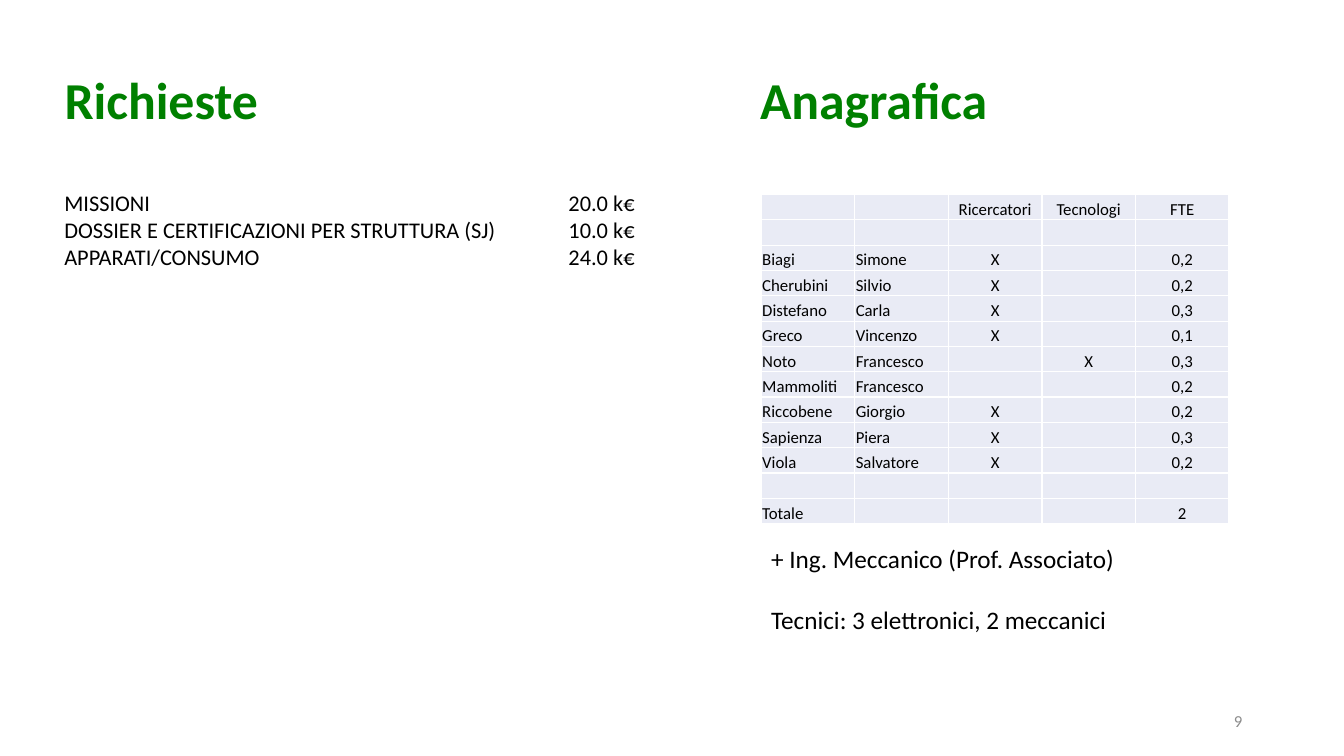
import lxml.etree
import pptx
import pptx.dml.color
import pptx.enum.text
import pptx.oxml.ns
import pptx.util

Inches = pptx.util.Inches
Pt = pptx.util.Pt
ALIGN = pptx.enum.text.PP_ALIGN
ANCHOR = pptx.enum.text.MSO_ANCHOR
AUTO_SIZE = pptx.enum.text.MSO_AUTO_SIZE

FONT = "Calibri"
BLACK, GREEN, GREY, CELL_FILL = "000000", "008000", "8C8C8C", "E9EBF5"

REQUESTS = [
    ("MISSIONI", "20.0 k€"),
    ("DOSSIER E CERTIFICAZIONI PER STRUTTURA (SJ)", "10.0 k€"),
    ("APPARATI/CONSUMO", "24.0 k€"),
]
STAFF_NOTES = ["+ Ing. Meccanico (Prof. Associato)", "Tecnici: 3 elettronici, 2 meccanici"]
EMPTY_ROW = ("", "", "", "", "")
STAFF = [
    ("", "", "Ricercatori", "Tecnologi", "FTE"),
    EMPTY_ROW,
    ("Biagi", "Simone", "X", "", "0,2"),
    ("Cherubini", "Silvio", "X", "", "0,2"),
    ("Distefano", "Carla", "X", "", "0,3"),
    ("Greco", "Vincenzo", "X", "", "0,1"),
    ("Noto", "Francesco", "", "X", "0,3"),
    ("Mammoliti", "Francesco", "", "", "0,2"),
    ("Riccobene", "Giorgio", "X", "", "0,2"),
    ("Sapienza", "Piera", "X", "", "0,3"),
    ("Viola", "Salvatore", "X", "", "0,2"),
    EMPTY_ROW,
    ("Totale", "", "", "", "2"),
]


def rgb(value):
    return pptx.dml.color.RGBColor.from_string(value)


def set_font(paragraph, size, color=BLACK, bold=False):
    font = paragraph.font
    font.name, font.size, font.bold = FONT, Pt(size), bold
    font.color.rgb = rgb(color)


def add_text(slide, lines, left, top, width, height):
    frame = slide.shapes.add_textbox(
        Inches(left), Inches(top), Inches(width), Inches(height)).text_frame
    frame.word_wrap = True
    frame.text = "\n".join(lines)
    return frame


def format_heading(shape, text, left, top, width, height):
    shape.left, shape.top = Inches(left), Inches(top)
    shape.width, shape.height = Inches(width), Inches(height)
    frame = shape.text_frame
    frame.text = text
    frame.word_wrap = False
    frame.auto_size = AUTO_SIZE.SHAPE_TO_FIT_TEXT
    frame.vertical_anchor = ANCHOR.TOP
    paragraph = frame.paragraphs[0]
    paragraph.alignment = ALIGN.LEFT
    set_font(paragraph, 37, GREEN, bold=True)


def add_requests(slide, left, top, width, height):
    """List the requests, with the amounts lined up at a tab stop."""
    lines = ["\t".join(request) for request in REQUESTS]
    frame = add_text(slide, lines, left, top, width, height)
    for paragraph in frame.paragraphs:
        properties = paragraph._p.get_or_add_pPr()
        tabs = lxml.etree.SubElement(properties, pptx.oxml.ns.qn("a:tabLst"))
        lxml.etree.SubElement(
            tabs, pptx.oxml.ns.qn("a:tab"), pos=str(Inches(5)), algn="l")
        set_font(paragraph, 16)


def fill_cell(cell, text, alignment):
    cell.fill.solid()
    cell.fill.fore_color.rgb = rgb(CELL_FILL)
    cell.vertical_anchor = ANCHOR.BOTTOM
    cell.margin_left = cell.margin_right = cell.margin_top = Inches(0.01)
    cell.margin_bottom = 0
    cell.text = text
    paragraph = cell.text_frame.paragraphs[0]
    paragraph.alignment = alignment
    set_font(paragraph, 12)
    if not text:
        lxml.etree.SubElement(
            paragraph._p, pptx.oxml.ns.qn("a:endParaRPr"), sz="1200")


def add_staff_table(slide, left, top, width, height):
    table = slide.shapes.add_table(
        len(STAFF), len(STAFF[0]),
        Inches(left), Inches(top), Inches(width), Inches(height)).table
    table.first_row = table.horz_banding = False
    for row, values in enumerate(STAFF):
        for column, text in enumerate(values):
            alignment = ALIGN.LEFT if column < 2 else ALIGN.CENTER
            fill_cell(table.cell(row, column), text, alignment)


def add_staff_notes(slide, left, top, width, height):
    frame = add_text(slide, STAFF_NOTES, left, top, width, height)
    for paragraph in frame.paragraphs:
        set_font(paragraph, 18)
    frame.paragraphs[-1].space_before = Pt(22)


def add_slide_number(slide, number, left, top, width, height):
    frame = add_text(slide, [number], left, top, width, height)
    frame.vertical_anchor = ANCHOR.MIDDLE
    frame.paragraphs[0].alignment = ALIGN.RIGHT
    set_font(frame.paragraphs[0], 12, GREY)


def add_requests_and_staff_slide(presentation):
    slide = presentation.slides.add_slide(presentation.slide_layouts[5])
    format_heading(slide.shapes.title, "Richieste", 0.54, 0.62, 2.14, 0.72)
    add_requests(slide, 0.54, 1.83, 6.13, 1.18)
    staff_heading = slide.shapes.add_textbox(0, 0, 0, 0)
    format_heading(staff_heading, "Anagrafica", 7.44, 0.62, 2.48, 0.72)
    add_staff_table(slide, 7.55, 1.93, 4.64, 3.27)
    add_staff_notes(slide, 7.55, 5.34, 3.75, 1.01)
    add_slide_number(slide, "9", 9.42, 6.95, 3, 0.4)


def main():
    presentation = pptx.Presentation()
    presentation.slide_width = Inches(13.33)
    presentation.slide_height = Inches(7.5)
    add_requests_and_staff_slide(presentation)
    presentation.save("out.pptx")


if __name__ == "__main__":
    main()
